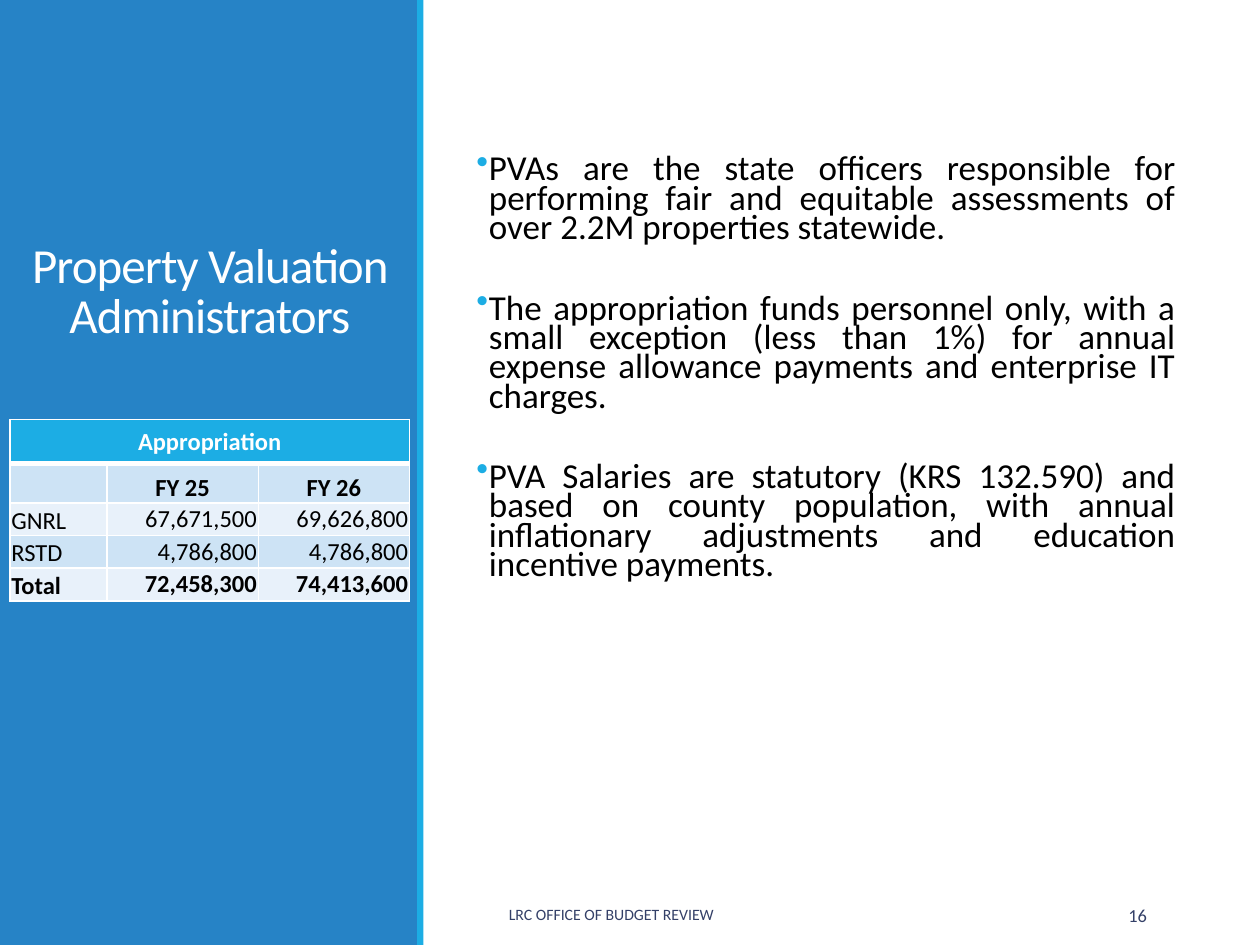
from pptx import Presentation
from pptx.dml.color import RGBColor
from pptx.enum.shapes import MSO_SHAPE
from pptx.enum.text import MSO_ANCHOR, PP_ALIGN
from pptx.oxml import parse_xml
from pptx.oxml.ns import nsdecls
from pptx.util import Inches, Pt

BLUE, CYAN, WHITE, BLACK, NAVY = "2683C6", "1CADE4", "FFFFFF", "000000", "344068"
BANDS = ["CDE3F5", "E8F1FA"]
LEFT, CENTER, RIGHT = PP_ALIGN.LEFT, PP_ALIGN.CENTER, PP_ALIGN.RIGHT
TOP, MIDDLE, BOTTOM = MSO_ANCHOR.TOP, MSO_ANCHOR.MIDDLE, MSO_ANCHOR.BOTTOM

PANELS = [(0, 3.32, BLUE), (3.31, 0.05, CYAN)]
TITLE = "Property Valuation Administrators"
BULLETS = [
    "PVAs are the state officers responsible for performing fair and equitable "
    "assessments of over 2.2M properties statewide.",
    "The appropriation funds personnel only, with a small exception (less than 1%) "
    "for annual expense allowance payments and enterprise IT charges.",
    "PVA Salaries are statutory (KRS 132.590) and based on county population, with "
    "annual inflationary adjustments and education incentive payments.",
]
FOOTERS = [
    ("LRC OFFICE OF BUDGET REVIEW", 3.94, 3.81, 9, LEFT),
    ("16", 8.12, 1.08, 10.5, RIGHT),
]
ROWS = [
    ["Appropriation", "", ""],
    ["", "FY 25", "FY 26"],
    ["GNRL", "67,671,500", "69,626,800"],
    ["RSTD", "4,786,800", "4,786,800"],
    ["Total", "72,458,300", "74,413,600"],
]
COL_WIDTHS = [0.77, 1.2, 1.2]
ROW_HEIGHTS = [0.35] + [0.26] * 4


def rgb(value):
    return RGBColor.from_string(value)


def write(p, text, size, color=BLACK, bold=False, align=LEFT):
    p.alignment = align
    r = p.add_run()
    r.text = text
    r.font.name, r.font.size, r.font.bold = "Calibri", Pt(size), bold
    r.font.color.rgb = rgb(color)
    return r


def set_frame(tf, anchor, insets):
    tf.word_wrap = True
    tf.vertical_anchor = anchor
    tf.margin_left, tf.margin_top, tf.margin_right, tf.margin_bottom = map(Inches, insets)


def place(sp, left, top, width, height):
    sp.left, sp.top, sp.width, sp.height = map(Inches, (left, top, width, height))


def add_bullet(p):
    pPr = p._p.get_or_add_pPr()
    pPr.set("marL", str(Inches(0.1)))
    pPr.set("indent", str(-Inches(0.1)))
    pPr.append(parse_xml(f'<a:buClr {nsdecls("a")}><a:srgbClr val="{CYAN}"/></a:buClr>'))
    pPr.append(parse_xml(f'<a:buChar {nsdecls("a")} char="•"/>'))


def set_borders(cell, bottom):
    tcPr = cell._tc.get_or_add_tcPr()
    for i, side in enumerate(("lnL", "lnR", "lnT", "lnB")):
        width = Pt(bottom if side == "lnB" else 1)
        tcPr.insert(i, parse_xml(
            f'<a:{side} {nsdecls("a")} w="{width}"><a:solidFill>'
            f'<a:srgbClr val="{WHITE}"/></a:solidFill></a:{side}>'))


def add_panels(s):
    for left, width, color in PANELS:
        sp = s.shapes.add_shape(MSO_SHAPE.RECTANGLE, Inches(left), 0, Inches(width), Inches(7.5))
        sp.shadow.inherit = False
        sp.fill.solid()
        sp.fill.fore_color.rgb = rgb(color)
        sp.line.fill.background()


def add_title(s):
    sp = s.shapes.title
    place(sp, 0, 0.65, 3.33, 2.5)
    set_frame(sp.text_frame, BOTTOM, (0.1, 0.05, 0.1, 0.42))
    p = sp.text_frame.paragraphs[0]
    p.line_spacing = 0.85
    r = write(p, TITLE, 28, WHITE, align=CENTER)
    r.font._element.set("spc", "-50")


def add_body(s):
    sp = s.shapes.add_textbox(0, 0, 0, 0)
    place(sp, 3.78, 0.8, 5.55, 6.37)
    tf = sp.text_frame
    set_frame(tf, TOP, (0, 0.45, 0, 0.05))
    for i, text in enumerate(BULLETS):
        p = tf.add_paragraph() if i else tf.paragraphs[0]
        write(p, text, 20, align=PP_ALIGN.JUSTIFY)
        p.line_spacing, p.space_before, p.space_after = 0.7, Pt(2), Pt(27)
        add_bullet(p)


def add_footers(s):
    for text, left, width, size, align in FOOTERS:
        sp = s.shapes.add_textbox(0, 0, 0, 0)
        place(sp, left, 7.06, width, 0.4)
        set_frame(sp.text_frame, MIDDLE, (0.1, 0.05, 0.1, 0.05))
        write(sp.text_frame.paragraphs[0], text, size, NAVY, align=align)


def add_budget_table(s):
    table = s.shapes.add_table(len(ROWS), len(COL_WIDTHS), Inches(0.08), Inches(3.33),
                               Inches(sum(COL_WIDTHS)), Inches(sum(ROW_HEIGHTS))).table
    for col, width in zip(table.columns, COL_WIDTHS):
        col.width = Inches(width)
    for i, (row, height) in enumerate(zip(ROWS, ROW_HEIGHTS)):
        table.rows[i].height = Inches(height)
        for j, text in enumerate(row):
            cell = table.cell(i, j)
            cell.margin_left = cell.margin_top = cell.margin_right = Inches(0.01)
            cell.margin_bottom = 0
            cell.vertical_anchor = MIDDLE if i == 0 else BOTTOM if i == 1 or j == 0 else TOP
            cell.fill.solid()
            cell.fill.fore_color.rgb = rgb(BANDS[(i - 1) % 2] if i else CYAN)
            set_borders(cell, 1 if i else 3)
            align = CENTER if i < 2 else RIGHT if j else LEFT
            write(cell.text_frame.paragraphs[0], text, 14, BLACK if i else WHITE,
                  bold=i in (0, 1, 4), align=align)
    table.cell(0, 0).merge(table.cell(0, 2))


def main():
    prs = Presentation()
    prs.slide_width, prs.slide_height = Inches(10), Inches(7.5)
    s = prs.slides.add_slide(prs.slide_layouts[5])
    add_panels(s)
    tree = s.shapes._spTree
    tree.append(s.shapes.title._element)
    add_title(s)
    add_body(s)
    add_footers(s)
    add_budget_table(s)
    prs.save("out.pptx")


if __name__ == "__main__":
    main()
